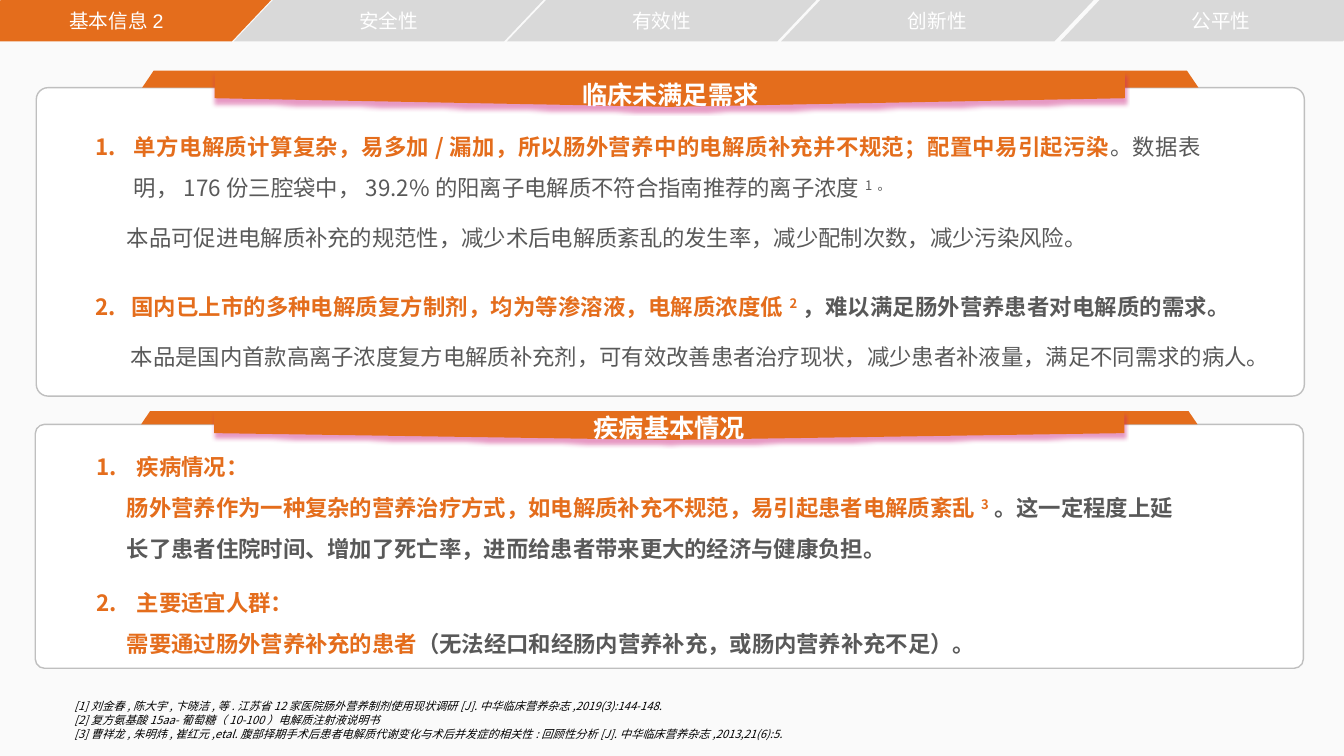
from lxml import etree
from pptx import Presentation
from pptx import util as u
from pptx.dml.color import RGBColor
from pptx.enum import shapes, text
from pptx.oxml import ns

ORANGE = RGBColor(0xE4, 0x6D, 0x1C)
GREY = RGBColor(0x59, 0x59, 0x59)
TAB_GREY = RGBColor(0xD9, 0xD9, 0xD9)
BORDER = RGBColor(0xBF, 0xBF, 0xBF)
PALE = RGBColor(0xFA, 0xFA, 0xFA)
WHITE = RGBColor(0xFF, 0xFF, 0xFF)
BLACK = RGBColor(0, 0, 0)
GLOW = RGBColor(0xC9, 0x19, 0x79)

CELL = 0.1
COLUMNS, ROWS = 133.33, 75
LINE_RATIO = 1.22
SHAPE = shapes.MSO_SHAPE
MIDDLE = text.MSO_ANCHOR.MIDDLE
TOP = text.MSO_ANCHOR.TOP
CENTER = text.PP_ALIGN.CENTER
JUSTIFY = text.PP_ALIGN.JUSTIFY

BODY = "Noto Sans CJK SC"
STYLES = {
    "key": dict(size=16, name=BODY, bold=True, color=ORANGE),
    "strong": dict(size=16, name=BODY, bold=True, color=GREY),
    "plain": dict(size=16, name=BODY, bold=False, color=GREY),
    "title": dict(size=18, name="Calibri", bold=True, color=WHITE),
    "tab": dict(size=14, name="Arial", bold=False, color=WHITE),
    "source": dict(size=8, name=BODY, italic=True, color=BLACK),
}


def child(parent, tag, **attributes):
    return etree.SubElement(parent, ns.qn(tag), attributes)


class Board:
    def __init__(self, deck, background):
        deck.slide_width = self.cells(COLUMNS)
        deck.slide_height = self.cells(ROWS)
        self.slide = deck.slides.add_slide(deck.slide_layouts[6])
        self.slide.background.fill.solid()
        self.slide.background.fill.fore_color.rgb = background

    @staticmethod
    def cells(count):
        return u.Inches(count * CELL)

    def box(self, at):
        return [self.cells(value) for value in at]

    def shape(self, kind, at, fill, adjust, border=None, rotation=0):
        item = self.slide.shapes.add_shape(kind, *self.box(at))
        item.shadow.inherit = False
        item.adjustments[0] = adjust
        item.rotation = rotation
        item.fill.solid()
        item.fill.fore_color.rgb = fill
        if border:
            item.line.color.rgb = border
            item.line.width = u.Pt(1)
        else:
            item.line.fill.background()
        return item

    def glow(self, item, color):
        effects = item._element.spPr.find(ns.qn("a:effectLst"))
        shadow = child(effects, "a:outerShdw", blurRad=str(u.Pt(3)), dist=str(u.Pt(3)),
                       dir="5400000", algn="t", rotWithShape="0")
        tint = child(shadow, "a:srgbClr", val=str(color))
        child(tint, "a:alpha", val="44000")

    def add_runs(self, paragraph, runs):
        for words, style, *raised in runs:
            run = paragraph.add_run()
            run.text = words
            values = dict(STYLES[style])
            run.font.color.rgb = values.pop("color")
            values["size"] = u.Pt(values["size"])
            for key, value in values.items():
                setattr(run.font, key, value)
            properties = run._r.get_or_add_rPr()
            child(properties, "a:ea", typeface=values["name"])
            if raised:
                properties.set("baseline", "30000")

    def paragraph(self, paragraph, runs, align=None, spacing=1, margin=0, hang=0, numbered=False):
        self.add_runs(paragraph, runs)
        size = STYLES[runs[0][1]]["size"]
        layout = {"alignment": align, "line_spacing": u.Pt(round(size * LINE_RATIO * spacing, 1))}
        for key, value in layout.items():
            setattr(paragraph, key, value)
        properties = paragraph._p.get_or_add_pPr()
        properties.set("marL", str(self.cells(margin)))
        properties.set("indent", str(-self.cells(hang)))
        if numbered:
            child(properties, "a:buFont", typeface="+mj-lt")
            child(properties, "a:buAutoNum", type="arabicPeriod")

    def text(self, at, paragraphs, anchor=TOP, bottom=0.5):
        frame = self.slide.shapes.add_textbox(*self.box(at)).text_frame
        settings = {"word_wrap": True, "vertical_anchor": anchor, "margin_bottom": self.cells(bottom)}
        for key, value in settings.items():
            setattr(frame, key, value)
        for index, (runs, layout) in enumerate(paragraphs):
            line = frame.add_paragraph() if index else frame.paragraphs[0]
            self.paragraph(line, runs, **layout)

    def panel(self, title, card, cap, ribbon, heading):
        self.shape(SHAPE.ROUNDED_RECTANGLE, card, WHITE, 0.038, BORDER)
        self.shape(SHAPE.TRAPEZOID, cap, ORANGE, 0.679)
        self.glow(self.shape(SHAPE.PENTAGON, ribbon, ORANGE, 0.243, rotation=90), GLOW)
        self.text(heading, [([(title, "title")], dict(align=CENTER))])

    def tab(self, label, at, fill):
        item = self.shape(SHAPE.PARALLELOGRAM, at, fill, 0.949)
        item.text_frame.vertical_anchor = MIDDLE
        line = item.text_frame.paragraphs[0]
        line.alignment = CENTER
        self.add_runs(line, [(label, "tab")])


def main():
    deck = Presentation()
    board = Board(deck, PALE)

    board.panel("临床未满足需求", (3.6, 8.7, 125.8, 30.6), (14.1, 7, 104.8, 1.7),
                (64.7, -36.3, 3.5, 90.3), (24.8, 7.3, 83.4, 2.8))
    board.text((8.5, 28.2, 112.3, 7.1), [([
        ("2.\t国内已上市的多种电解质复方制剂，均为等渗溶液，电解质浓度低", "key"),
        ("2", "key", True),
        ("，难以满足肠外营养患者对电解质的需求。", "strong"),
    ], dict(align=JUSTIFY, spacing=1.5, margin=3.5, hang=3.5))], MIDDLE, 4.6)
    board.text((8.5, 12.1, 111.6, 11.7), [([
        ("单方电解质计算复杂，易多加/漏加，所以肠外营养中的电解质补充并不规范；配置中易引起污染", "key"),
        ("。数据表明，176份三腔袋中，39.2%的阳离子电解质不符合指南推荐的离子浓度", "plain"),
        ("1。", "plain", True),
    ], dict(align=JUSTIFY, spacing=1.5, margin=3.8, hang=3.8, numbered=True))], MIDDLE, 4.6)
    board.text((11.6, 19.1, 115.7, 8.7), [([
        ("本品可促进电解质补充的规范性，减少术后电解质紊乱的发生率，减少配制次数，减少污染风险。", "plain"),
    ], dict(spacing=1.1))], MIDDLE)
    board.text((12, 32.7, 115.7, 4.7), [([
        ("本品是国内首款高离子浓度复方电解质补充剂，可有效改善患者治疗现状，减少患者补液量，满足不同需求的病人。", "plain"),
    ], dict(spacing=1.2))], MIDDLE)

    board.panel("疾病基本情况", (3.5, 42.1, 125.8, 24.2), (14, 40.8, 104.8, 1.3),
                (65, -2.9, 2.8, 90.3), (24.7, 40.4, 83.4, 4.3))
    topic = dict(margin=4, hang=4)
    detail = dict(spacing=1.5, margin=3)
    board.text((8.6, 44.4, 111.3, 11.3), [
        ([("1.\t疾病情况：", "key")], topic),
        ([("肠外营养作为一种复杂的营养治疗方式，如电解质补充不规范，易引起患者电解质紊乱", "key"),
          ("3", "key", True), ("。这一定程度上延", "strong")], detail),
        ([("长了患者住院时间、增加了死亡率，进而给患者带来更大的经济与健康负担。", "strong")], detail),
    ])
    board.text((8.6, 57.9, 93.5, 7.3), [
        ([("2.\t主要适宜人群：", "key")], topic),
        ([("需要通过肠外营养补充的患者", "key"),
          ("（无法经口和经肠内营养补充，或肠内营养补充不足）。", "strong")], detail),
    ])

    tabs = [("公平性", 105.2, 31.9), ("创新性", 77.5, 31), ("有效性", 50.3, 30.7),
            ("安全性", 23.2, 30.7), ("基本信息2", -3.8, 30.7)]
    for label, left, width in tabs:
        board.tab(label, (left, 0, width, 4.1), ORANGE if left < 0 else TAB_GREY)

    sources = [
        "[1]刘金春,陈大宇,卞晓洁,等.江苏省12家医院肠外营养制剂使用现状调研[J].中华临床营养杂志,2019(3):144-148.",
        "[2]复方氨基酸15aa-葡萄糖（10-100）电解质注射液说明书",
        "[3]曹祥龙,朱明炜,崔红元,etal.腹部择期⼿术后患者电解质代谢变化与术后并发症的相关性:回顾性分析[J].中华临床营养杂志,2013,21(6):5.",
    ]
    board.text((6.4, 68.9, 80.2, 5), [([(source, "source")], {}) for source in sources])

    deck.save("out.pptx")


if __name__ == "__main__":
    main()
